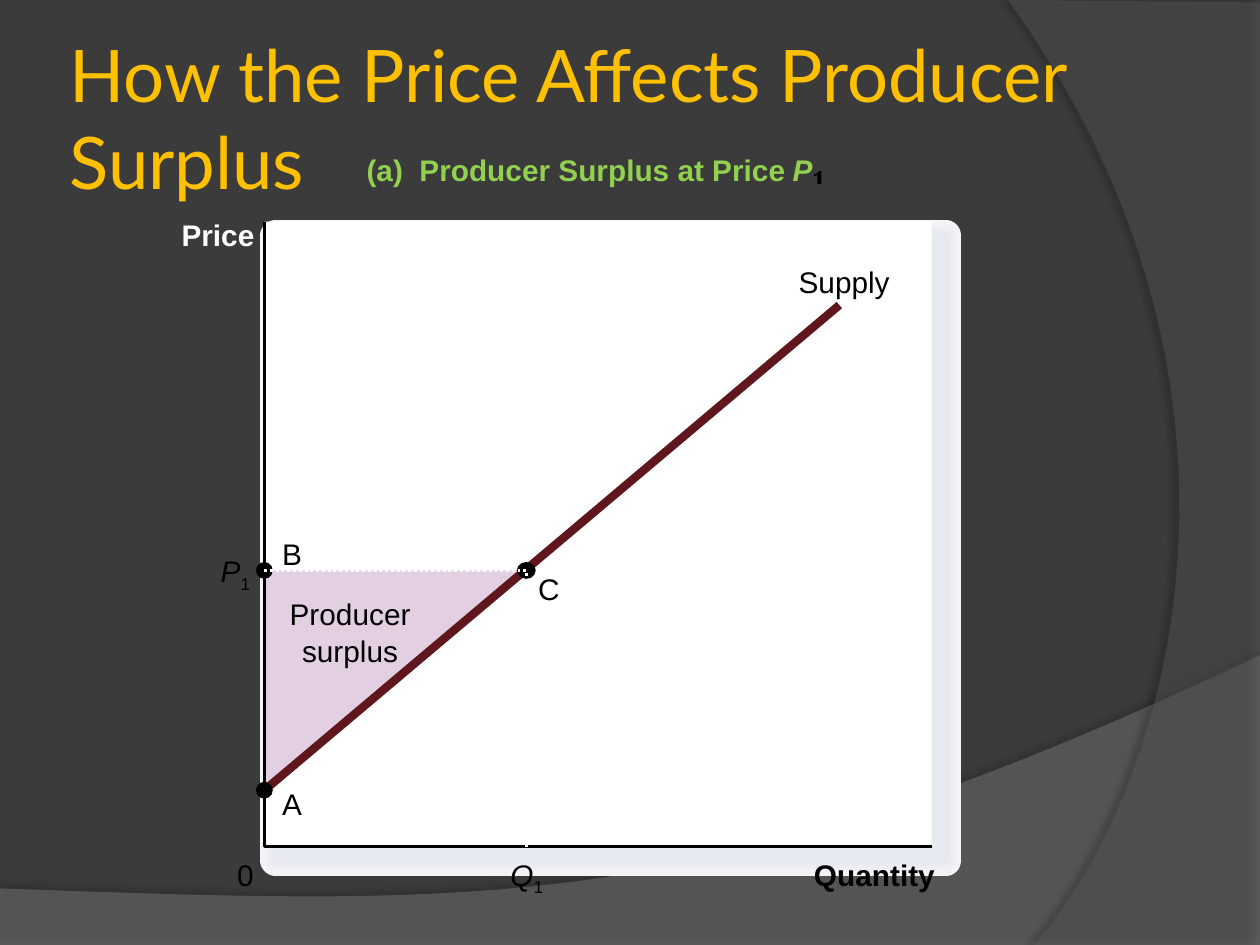
from dataclasses import dataclass
from typing import Optional

from lxml.etree import SubElement
from pptx import Presentation
from pptx.dml.color import RGBColor
from pptx.enum.dml import MSO_LINE
from pptx.enum.shapes import MSO_CONNECTOR, MSO_SHAPE
from pptx.enum.text import MSO_ANCHOR, MSO_AUTO_SIZE, PP_ALIGN
from pptx.oxml.ns import qn
from pptx.util import Cm, Pt

COLORS = {
    "background": "3B3B3B", "hill": "7F7F7F", "arc": "5E5E5E",
    "title": "FFC000", "subtitle": "92D050", "white": "FFFFFF",
    "black": "000000", "surplus": "E2CFE1", "supply": "5F161D",
}
BEVEL = [
    ("F3F6F9", 17.5), ("F2F4F8", 16), ("F1F4F7", 14.38), ("F0F2F5", 12.75),
    ("EEF1F4", 11.13), ("EDEFF3", 9.63), ("EBEEF2", 8), ("EAECF1", 6.38),
    ("E9EBF0", 4.75), ("E7EAEF", 3.25), ("E6E9EF", 1.63),
]
LEFT, TOP, RIGHT, BOTTOM = 5.33, 4.47, 18.78, 17.07
POINT_A = (LEFT, 15.93)
POINT_B = (LEFT, 11.5)
POINT_C = (10.61, 11.5)
SUPPLY_END = (16.92, 6.15)
AXIS_LABEL_TOP = 17.27
DOT = 0.34

Point = tuple[float, float]


@dataclass
class Label:
    text: str
    left: float
    top: float
    width: float
    color: str = "black"
    bold: bool = False
    italic: bool = False
    subscript: str = ""
    height: float = 0.81


@dataclass
class Dot:
    center: Point
    width: float
    label: Label


@dataclass
class Backdrop:
    points: list[Point]
    color: str
    opacity: int
    shadow_opacity: int
    shadow_distance: float
    shadow_angle: int


def rgb(name: str) -> RGBColor:
    return RGBColor.from_string(COLORS.get(name, name))


def curve(start: Point, first: Point, second: Point, end: Point, steps: int = 32) -> list[Point]:
    def at(t: float, axis: int) -> float:
        u = 1 - t
        return (u ** 3 * start[axis] + 3 * u * u * t * first[axis]
                + 3 * u * t * t * second[axis] + t ** 3 * end[axis])
    return [(at(i / steps, 0), at(i / steps, 1)) for i in range(steps + 1)]


def paint(shape, fill: Optional[str] = None, line: Optional[str] = None, width: float = 1.63) -> None:
    shape.shadow.inherit = False
    if fill:
        shape.fill.solid()
        shape.fill.fore_color.rgb = rgb(fill)
    else:
        shape.fill.background()
    if line:
        shape.line.color.rgb = rgb(line)
        shape.line.width = Pt(width)
    else:
        shape.line.fill.background()


def draw_outline(canvas, points: list[Point], fill: Optional[str] = None, line: Optional[str] = None):
    corners = [(Cm(x), Cm(y)) for x, y in points]
    builder = canvas.build_freeform(*corners[0], scale=1.0)
    builder.add_line_segments(corners[1:], close=fill is not None)
    shape = builder.convert_to_shape()
    paint(shape, fill, line)
    return shape


def draw_shape(canvas, kind, left: float, top: float, width: float, height: float, fill: str,
               line: Optional[str] = None, line_width: float = 1.63) -> None:
    shape = canvas.add_shape(kind, Cm(left), Cm(top), Cm(width), Cm(height))
    paint(shape, fill, line, line_width)


def draw_label(canvas, label: Label) -> None:
    box = canvas.add_textbox(Cm(label.left), Cm(label.top), Cm(label.width), Cm(label.height))
    frame = box.text_frame
    frame.margin_left = frame.margin_right = frame.margin_top = frame.margin_bottom = 0
    frame.word_wrap = False
    frame.auto_size = MSO_AUTO_SIZE.SHAPE_TO_FIT_TEXT
    para = frame.paragraphs[0]
    para.font.name, para.font.size, para.font.bold = "Arial", Pt(17), label.bold
    para.font.color.rgb = rgb(label.color)
    span = para.add_run()
    span.text, span.font.italic = label.text, label.italic
    if label.subscript:
        span = para.add_run()
        span.text = label.subscript
        span.font._element.set("baseline", "-25000")


def draw_dot(canvas, dot: Dot) -> None:
    x, y = dot.center
    draw_shape(canvas, MSO_SHAPE.OVAL, x - dot.width / 2, y - DOT / 2, dot.width, DOT, "black")
    draw_label(canvas, dot.label)


def draw_backdrop(page, backdrop: Backdrop) -> None:
    shape = draw_outline(page.shapes, backdrop.points, backdrop.color)
    properties = shape._element.spPr
    color = properties.find(qn("a:solidFill"))[0]
    SubElement(color, qn("a:alpha"), val=str(backdrop.opacity * 1000))
    shadow = SubElement(
        properties.find(qn("a:effectLst")), qn("a:outerShdw"), blurRad=str(Pt(4)),
        dist=str(Pt(backdrop.shadow_distance)), dir=str(backdrop.shadow_angle * 60000),
        algn="ctr", rotWithShape="0")
    shade = SubElement(shadow, qn("a:srgbClr"), val=COLORS["black"])
    SubElement(shade, qn("a:alpha"), val=str(backdrop.shadow_opacity * 1000))
    page.shapes.title._element.addprevious(shape._element)


def draw_title(page) -> None:
    title = page.shapes.title
    title.left, title.top, title.width, title.height = Cm(1.27), Cm(0.76), Cm(20.75), Cm(3.18)
    frame = title.text_frame
    frame.margin_left = frame.margin_right = frame.margin_top = frame.margin_bottom = Cm(0.13)
    frame.vertical_anchor = MSO_ANCHOR.MIDDLE
    frame.word_wrap = True
    frame.auto_size = MSO_AUTO_SIZE.NONE
    frame.text = "How the Price Affects Producer Surplus"
    para = frame.paragraphs[0]
    para.alignment = PP_ALIGN.LEFT
    para.font.name, para.font.size = "Lato", Pt(41.4)
    para.font.color.rgb = rgb("title")


def draw_supply(canvas) -> None:
    supply = canvas.add_connector(MSO_CONNECTOR.STRAIGHT, *map(Cm, POINT_A + SUPPLY_END))
    supply.line.color.rgb = rgb("supply")
    supply.line.width = Pt(4.75)
    SubElement(supply._element.spPr, qn("a:effectLst"))
    draw_label(canvas, Label("Supply", 16.1, 5.31, 2.03))


def main() -> None:
    deck = Presentation()
    deck.slide_width, deck.slide_height = Cm(25.4), Cm(19.05)
    page = deck.slides.add_slide(deck.slide_layouts[5])
    page.background.fill.solid()
    page.background.fill.fore_color.rgb = rgb("background")
    shapes = page.shapes

    hill = [(0, 19.05), (25.4, 19.05)] + curve((25.4, 13.21), (14.2, 18.52), (9.93, 18.26), (0, 17.91))
    arc = [(25.4, 0.05), (25.4, 19.05)] + curve((20.85, 19.05), (23.75, 15.72), (25.86, 7.62), (20.32, 0))
    draw_backdrop(page, Backdrop(hill, "hill", 45, 35, 3.5, 270))
    draw_backdrop(page, Backdrop(arc, "arc", 40, 45, 4, 180))
    draw_title(page)

    for color, width in BEVEL:
        draw_shape(shapes, MSO_SHAPE.RECTANGLE, 5.56, 4.75, 13.51, 12.6, color, color, width)
    draw_shape(shapes, MSO_SHAPE.RECTANGLE, LEFT, TOP, RIGHT - LEFT, BOTTOM - TOP, "white")

    area = shapes.add_group_shape().shapes
    draw_outline(area, [POINT_C, POINT_B, POINT_A], fill="surplus")
    draw_label(area, Label("Producer", 5.84, 12.01, 2.67))
    draw_label(area, Label("surplus", 6.09, 12.75, 2.18))

    draw_outline(shapes, [(LEFT, TOP), (LEFT, BOTTOM), (RIGHT, BOTTOM)], line="black")
    for label in (
        Label("Quantity", 16.41, AXIS_LABEL_TOP, 2.69, bold=True),
        Label("(a)  Producer Surplus at Price", 7.39, 3.05, 8.71, "subtitle", bold=True, height=0.74),
        Label("P", 15.98, 3.05, 0.41, "subtitle", bold=True, italic=True, height=0.74),
        Label("Price", 3.66, 4.37, 1.5, "white", bold=True, height=0.74),
        Label("0", 4.78, AXIS_LABEL_TOP, 0.61),
    ):
        draw_label(shapes, label)
    draw_outline(shapes, [(16.56, 3.45), (16.51, 3.45), (16.46, 3.51), (16.41, 3.51), (16.41, 3.56),
                          (16.48, 3.53), (16.48, 3.71), (16.56, 3.71)], fill="black")

    draw_supply(shapes.add_group_shape().shapes)

    dots = shapes.add_group_shape().shapes
    draw_dot(dots, Dot(POINT_B, DOT, Label("B", 5.69, 10.8, 0.66)))
    draw_dot(dots, Dot(POINT_A, DOT, Label("A", 5.69, 15.85, 0.66)))
    draw_dot(dots, Dot(POINT_C, 0.38, Label("C", 10.85, 11.5, 0.69)))

    guides = shapes.add_group_shape().shapes
    guide = draw_outline(guides, [POINT_B, POINT_C, (POINT_C[0], BOTTOM)], line="white")
    guide.line.dash_style = MSO_LINE.ROUND_DOT
    draw_label(guides, Label("Q", 10.29, AXIS_LABEL_TOP, 0.69, italic=True, subscript="1", height=0.71))
    draw_label(guides, Label("P", 4.45, 11.15, 0.61, italic=True, subscript="1", height=0.71))

    deck.save("out.pptx")


if __name__ == "__main__":
    main()
